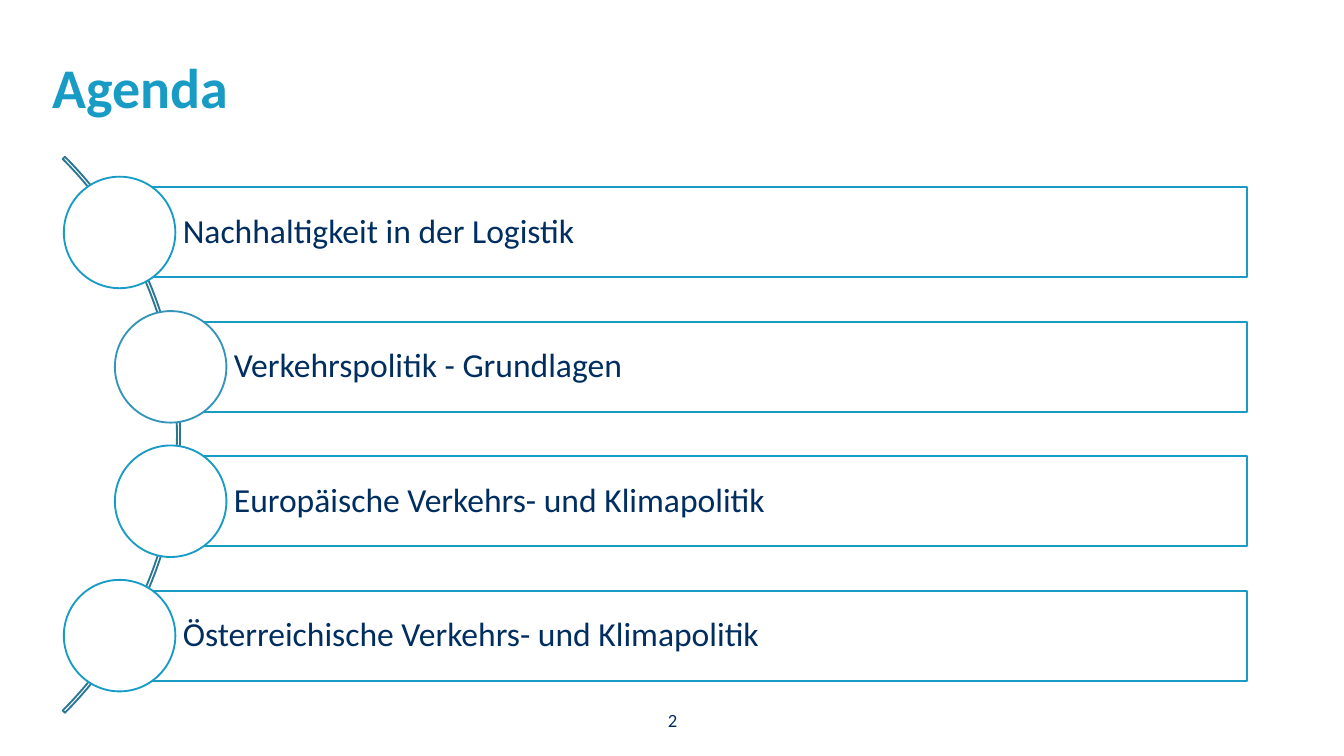
import pptx
import pptx.util
import pptx.dml.color
import pptx.enum.shapes
import pptx.enum.text

Inches, Pt = pptx.util.Inches, pptx.util.Pt
RGBColor = pptx.dml.color.RGBColor
MSO_SHAPE = pptx.enum.shapes.MSO_SHAPE
ANCHOR = pptx.enum.text.MSO_ANCHOR
ALIGN = pptx.enum.text.PP_ALIGN

# Content: topic, indent from the outer column, circle outline
TEAL = RGBColor(0x18, 0x9B, 0xC4)
BLUE = RGBColor(0x34, 0x94, 0xBA)
ARC = RGBColor(0x2A, 0x77, 0x95)
NAVY = RGBColor(0x00, 0x2E, 0x60)
WHITE = RGBColor(0xFF, 0xFF, 0xFF)

TITLE = "Agenda"
PAGE = "2"
TOPICS = [
    ("Nachhaltigkeit in der Logistik", 0, TEAL),
    ("Verkehrspolitik - Grundlagen", 0.38, BLUE),
    ("Europäische Verkehrs- und Klimapolitik", 0.38, TEAL),
    ("Österreichische Verkehrs- und Klimapolitik", 0, TEAL),
]

# Layout in inches
SLIDE_W = 10
SLIDE_H = SLIDE_W * 9 / 16
FIRST_X, FIRST_Y, PITCH = 0.89, 1.73, 1.0  # centre of the first circle
BAR_RIGHT, BAR_H, CIRCLE = 9.28, 0.67, 0.83


def put_text(shape, text, size, color=NAVY, bold=False, align=ALIGN.LEFT,
             anchor=ANCHOR.MIDDLE, insets=(0, 0, 0, 0), spacing=None):
    tf = shape.text_frame
    tf.word_wrap = True
    tf.auto_size = pptx.enum.text.MSO_AUTO_SIZE.NONE
    tf.vertical_anchor = anchor
    (tf.margin_left, tf.margin_top,
     tf.margin_right, tf.margin_bottom) = [Inches(v) for v in insets]
    p = tf.paragraphs[0]
    p.alignment = align
    p.line_spacing = spacing
    r = p.add_run()
    r.text = text
    r.font.name, r.font.size, r.font.bold = "Calibri", Pt(size), bold
    r.font.color.rgb = color


def add_outline(s, kind, x, y, w, h, line, fill=None):
    sp = s.shapes.add_shape(kind, Inches(x), Inches(y), Inches(w), Inches(h))
    sp.shadow.inherit = False
    if fill is None:
        sp.fill.background()
    else:
        sp.fill.solid()
        sp.fill.fore_color.rgb = fill
    sp.line.color.rgb = line
    sp.line.width = Pt(1)
    return sp


prs = pptx.Presentation()
prs.slide_width, prs.slide_height = Inches(SLIDE_W), Inches(SLIDE_H)
s = prs.slides.add_slide(prs.slide_layouts[5])

# Title
title = s.shapes.title
title.left, title.top = Inches(0.39), Inches(0.39)
title.width, title.height = Inches(8.27), Inches(1.02)
put_text(title, TITLE, 30, color=TEAL, bold=True, anchor=ANCHOR.TOP)

# Page number
number = s.shapes.add_textbox(Inches(4.61), Inches(5.2), Inches(0.79), Inches(0.31))
put_text(number, PAGE, 10, align=ALIGN.CENTER)

# Arc behind the circles, from 315 to 45 degrees
arc = add_outline(s, MSO_SHAPE.BLOCK_ARC, -4.51, 0.31, 5.85, 5.85, ARC)
for i, value in enumerate((189, 27, 0.004)):
    arc.adjustments[i] = value

# Topic bars, each with its circle on the left end
for i, (topic, indent, outline) in enumerate(TOPICS):
    x, y = FIRST_X + indent, FIRST_Y + i * PITCH
    bar = add_outline(s, MSO_SHAPE.RECTANGLE, x, y - BAR_H / 2,
                      BAR_RIGHT - x, BAR_H, TEAL)
    put_text(bar, topic, 18, insets=(0.47, 0.08, 0.08, 0.08), spacing=0.9)
    add_outline(s, MSO_SHAPE.OVAL, x - CIRCLE / 2, y - CIRCLE / 2,
                CIRCLE, CIRCLE, outline, fill=WHITE)

prs.save("out.pptx")
